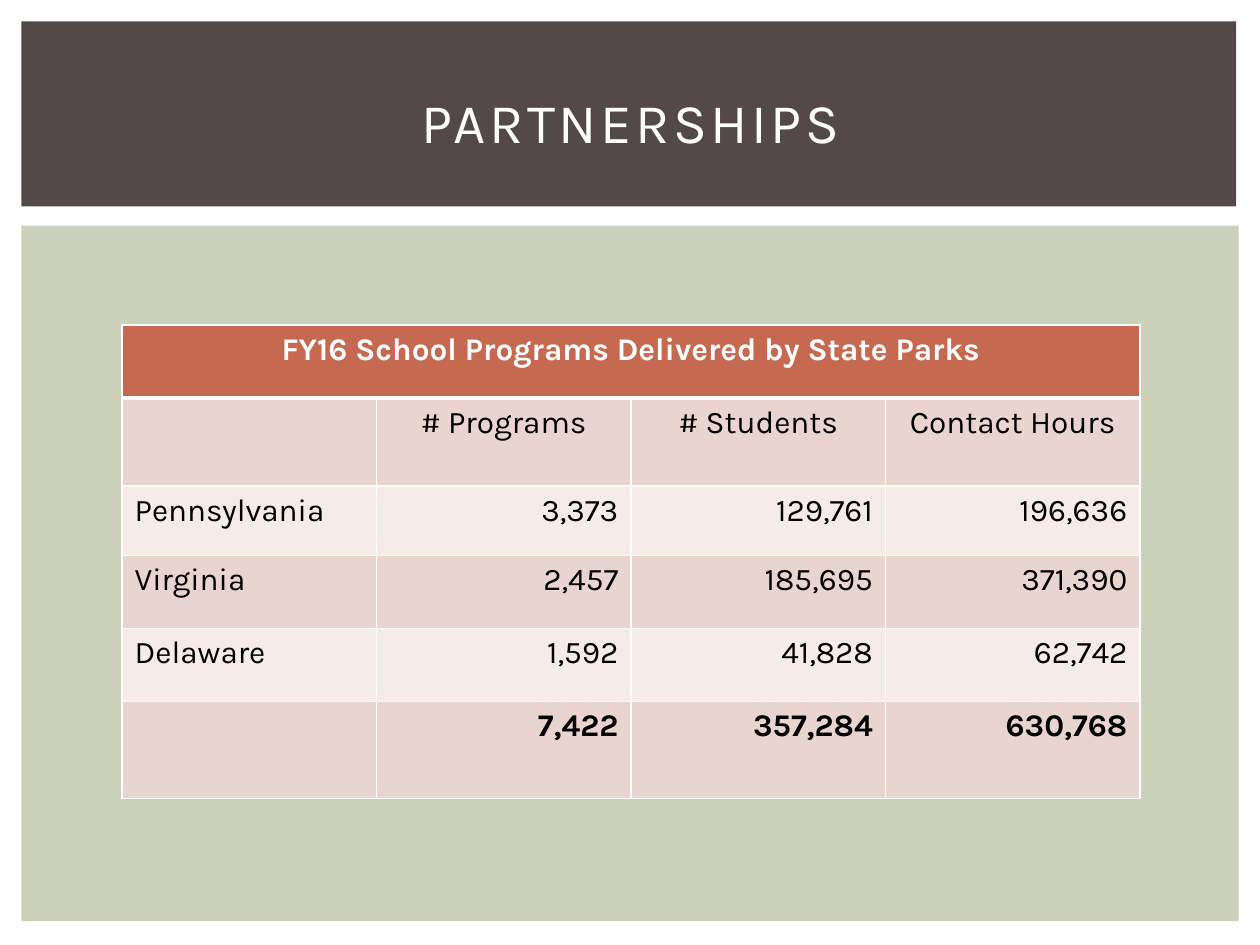
from lxml import etree
from pptx import Presentation
from pptx.dml.color import RGBColor
from pptx.enum.shapes import MSO_SHAPE
from pptx.enum.text import MSO_ANCHOR, PP_ALIGN
from pptx.oxml.ns import qn
from pptx.util import Cm, Pt

RECT = MSO_SHAPE.RECTANGLE
MIDDLE = MSO_ANCHOR.MIDDLE
LEFT, CENTER, RIGHT = PP_ALIGN.LEFT, PP_ALIGN.CENTER, PP_ALIGN.RIGHT

WHITE = RGBColor(0xFF, 0xFF, 0xFF)
BLACK = RGBColor(0x00, 0x00, 0x00)
SAGE = RGBColor(0xCC, 0xD1, 0xB9)
BROWN = RGBColor(0x53, 0x49, 0x49)
RUST = RGBColor(0xC6, 0x69, 0x51)
PINK = RGBColor(0xEA, 0xD4, 0xD0)
PALE = RGBColor(0xF5, 0xEB, 0xE9)

FONT = "Karla"
ROW_HEIGHTS = [1.47, 1.78, 1.4, 1.47, 1.47, 1.96]
ROWS = [
    ["FY16 School Programs Delivered by State Parks", "", "", ""],
    ["", "# Programs", "# Students", "Contact Hours"],
    ["Pennsylvania", "3,373", "129,761", "196,636"],
    ["Virginia", "2,457", "185,695", "371,390"],
    ["Delaware", "1,592", "41,828", "62,742"],
    ["", "7,422", "357,284", "630,768"],
]


def add_panel(slide, box, color):
    sp = slide.shapes.add_shape(RECT, *map(Cm, box))
    sp.shadow.inherit = False
    sp.fill.solid()
    sp.fill.fore_color.rgb = color
    sp.line.fill.background()


def write_text(tf, text, align, color, **font):
    p = tf.paragraphs[0]
    p.alignment = align
    r = p.add_run()
    r.text = text
    r.font.color.rgb = color
    for name, value in {"name": FONT, **font}.items():
        setattr(r.font, name, value)
    return r


def set_title(slide, text, box):
    title = slide.shapes.title
    slide.shapes.element.append(title.element)
    for name, value in zip(("left", "top", "width", "height"), box):
        setattr(title, name, Cm(value))
    tf = title.text_frame
    tf.vertical_anchor = MIDDLE
    r = write_text(tf, text, CENTER, WHITE, size=Pt(32))
    r.font._element.set("spc", "200")


def set_borders(cell, **widths):
    tcPr = cell._tc.get_or_add_tcPr()
    for side in "LRTB":
        width = Pt(widths.get(side, 1))
        ln = etree.SubElement(tcPr, qn(f"a:ln{side}"), w=str(width))
        fill = etree.SubElement(ln, qn("a:solidFill"))
        etree.SubElement(fill, qn("a:srgbClr"), val=str(WHITE))


def format_cell(cell, row, col, text):
    header, total = row == 0, row == len(ROWS) - 1
    set_borders(cell, **({"B": 3} if header else {"T": 3} if row == 1 else {}))
    cell.fill.solid()
    cell.fill.fore_color.rgb = RUST if header else PINK if row % 2 else PALE
    if text:
        align = CENTER if row < 2 else RIGHT if col else LEFT
        color = WHITE if header else BLACK
        write_text(cell.text_frame, text, align, color, size=Pt(18), bold=header or total)


def add_programs_table(slide, left, top, width):
    size = len(ROWS), len(ROWS[0])
    frame = slide.shapes.add_table(*size, *map(Cm, (left, top, width, sum(ROW_HEIGHTS))))
    table = frame.table
    for row, height in zip(table.rows, ROW_HEIGHTS):
        row.height = Cm(height)
    for i, texts in enumerate(ROWS):
        for j, text in enumerate(texts):
            format_cell(table.cell(i, j), i, j, text)
    table.cell(0, 0).merge(table.cell(0, size[1] - 1))


def main():
    prs = Presentation()
    prs.slide_width, prs.slide_height = Cm(25.4), Cm(19.05)
    slide = prs.slides.add_slide(prs.slide_layouts[5])
    add_panel(slide, (0.43, 4.55, 24.54, 14.02), SAGE)
    add_panel(slide, (0.43, 0.43, 24.49, 3.73), BROWN)
    set_title(slide, "PARTNERSHIPS", (1.07, 0.99, 23.29, 2.92))
    add_programs_table(slide, 2.46, 6.55, 20.52)
    prs.save("out.pptx")


if __name__ == "__main__":
    main()
